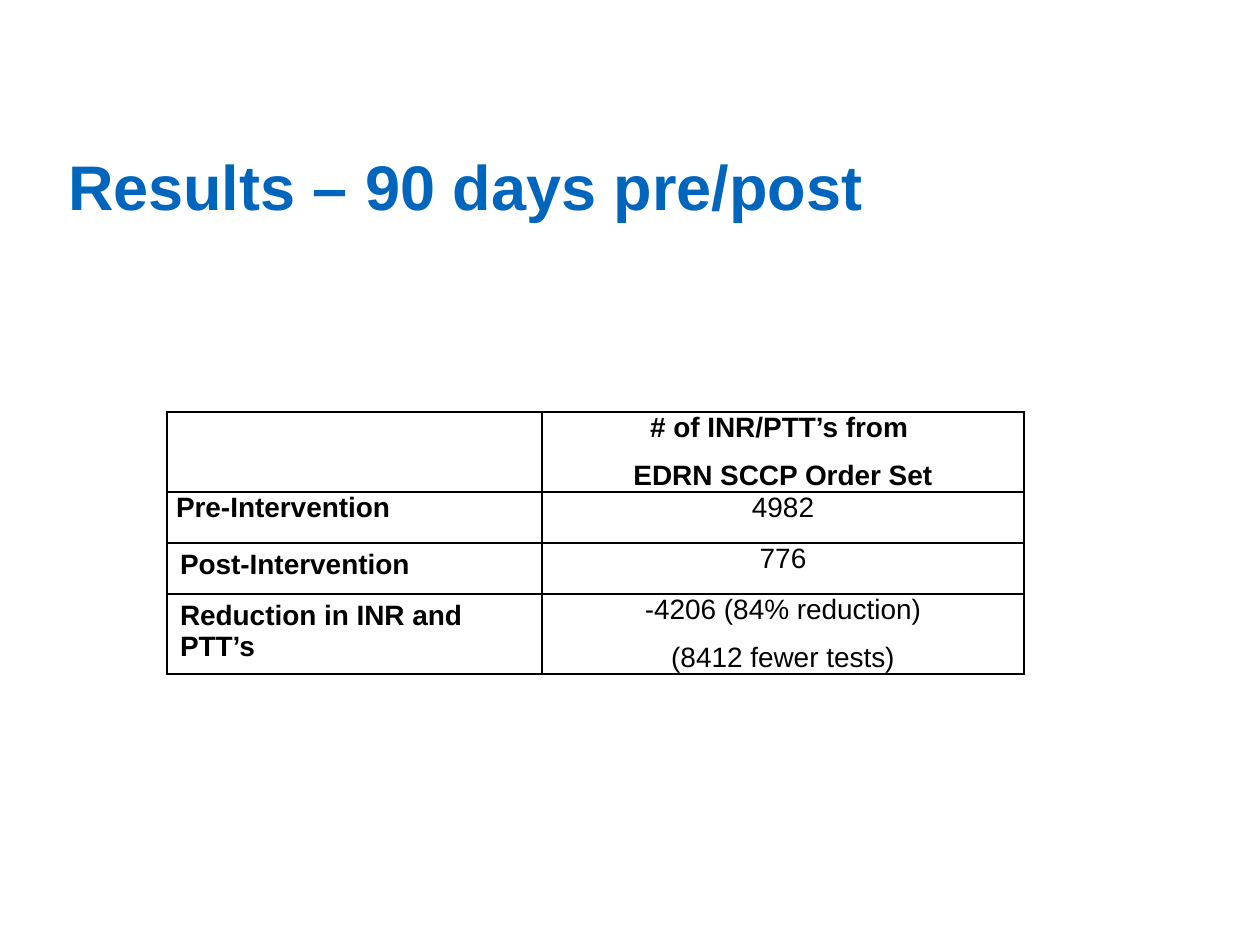
from dataclasses import dataclass

from lxml import etree
from pptx import Presentation
from pptx import util as u
from pptx.dml.color import RGBColor
from pptx.enum import text
from pptx.oxml import ns

EMU_PER_PX = 914400 / 126
COLORS = {"title": "0065BD", "ink": "000000"}
COLUMN_WIDTHS = (375, 482)
ROW_HEIGHTS = (80, 51, 51, 80)


@dataclass
class Entry:
    lines: tuple[str, ...] = ()
    bold: bool = False
    centered: bool = False
    side: int = 9
    top: int = 0


ROWS = (
    (Entry(), Entry(("# of INR/PTT’s from ", "EDRN SCCP Order Set"), bold=True, centered=True)),
    (Entry(("Pre-Intervention",), bold=True), Entry(("4982",), centered=True)),
    (Entry(("Post-Intervention",), bold=True, side=13, top=6), Entry(("776",), centered=True)),
    (
        Entry(("Reduction in INR and PTT’s",), bold=True, side=13, top=6),
        Entry(("-4206 (84% reduction)", "(8412 fewer tests)"), centered=True),
    ),
)


def px(length: int) -> u.Emu:
    return u.Emu(round(length * EMU_PER_PX))


def write(para, words: str, *, size: int, color: str, bold: bool = False,
          align=text.PP_ALIGN.LEFT, before: int = 0) -> None:
    para.alignment = align
    para.space_before = u.Pt(before)
    span = para.add_run()
    span.text = words
    span.font.name = "Arial"
    span.font.size = u.Pt(size)
    span.font.bold = bold
    span.font.color.rgb = RGBColor.from_string(COLORS[color])


def draw_borders(cell) -> None:
    properties = cell._tc.get_or_add_tcPr()
    for side in ("a:lnL", "a:lnR", "a:lnT", "a:lnB"):
        line = etree.SubElement(properties, ns.qn(side), w=str(u.Pt(1)))
        fill = etree.SubElement(line, ns.qn("a:solidFill"))
        etree.SubElement(fill, ns.qn("a:srgbClr"), val=COLORS["ink"])


def fill_cell(cell, entry: Entry) -> None:
    draw_borders(cell)
    cell.fill.background()
    cell.margin_left = cell.margin_right = px(entry.side)
    cell.margin_top = cell.margin_bottom = px(entry.top)
    align = text.PP_ALIGN.CENTER if entry.centered else text.PP_ALIGN.LEFT
    for index, words in enumerate(entry.lines):
        para = cell.text_frame.add_paragraph() if index else cell.text_frame.paragraphs[0]
        write(para, words, size=16, color="ink", bold=entry.bold,
              align=align, before=10 if index else 0)


def add_title(page) -> None:
    title = page.shapes.title
    title.left, title.top, title.width, title.height = map(px, (0, 106, 1189, 158))
    frame = title.text_frame
    frame.word_wrap = True
    frame.auto_size = text.MSO_AUTO_SIZE.NONE
    frame.vertical_anchor = text.MSO_ANCHOR.MIDDLE
    frame.margin_left = frame.margin_right = px(6)
    frame.margin_top = frame.margin_bottom = px(6)
    para = frame.paragraphs[0]
    para._p.get_or_add_pPr().set("indent", str(px(62)))
    write(para, "Results – 90 days pre/post", size=36, color="title", bold=True)


def add_results(page) -> None:
    table = page.shapes.add_table(
        len(ROWS), len(COLUMN_WIDTHS), px(167), px(412),
        px(sum(COLUMN_WIDTHS)), px(sum(ROW_HEIGHTS)),
    ).table
    table.first_row = table.horz_banding = False
    for column, width in zip(table.columns, COLUMN_WIDTHS):
        column.width = px(width)
    for row, height, entries in zip(table.rows, ROW_HEIGHTS, ROWS):
        row.height = px(height)
        for cell, entry in zip(row.cells, entries):
            fill_cell(cell, entry)


def main() -> None:
    deck = Presentation()
    deck.slide_width, deck.slide_height = px(1260), px(945)
    page = deck.slides.add_slide(deck.slide_layouts[5])
    add_title(page)
    add_results(page)
    deck.save("out.pptx")


if __name__ == "__main__":
    main()
